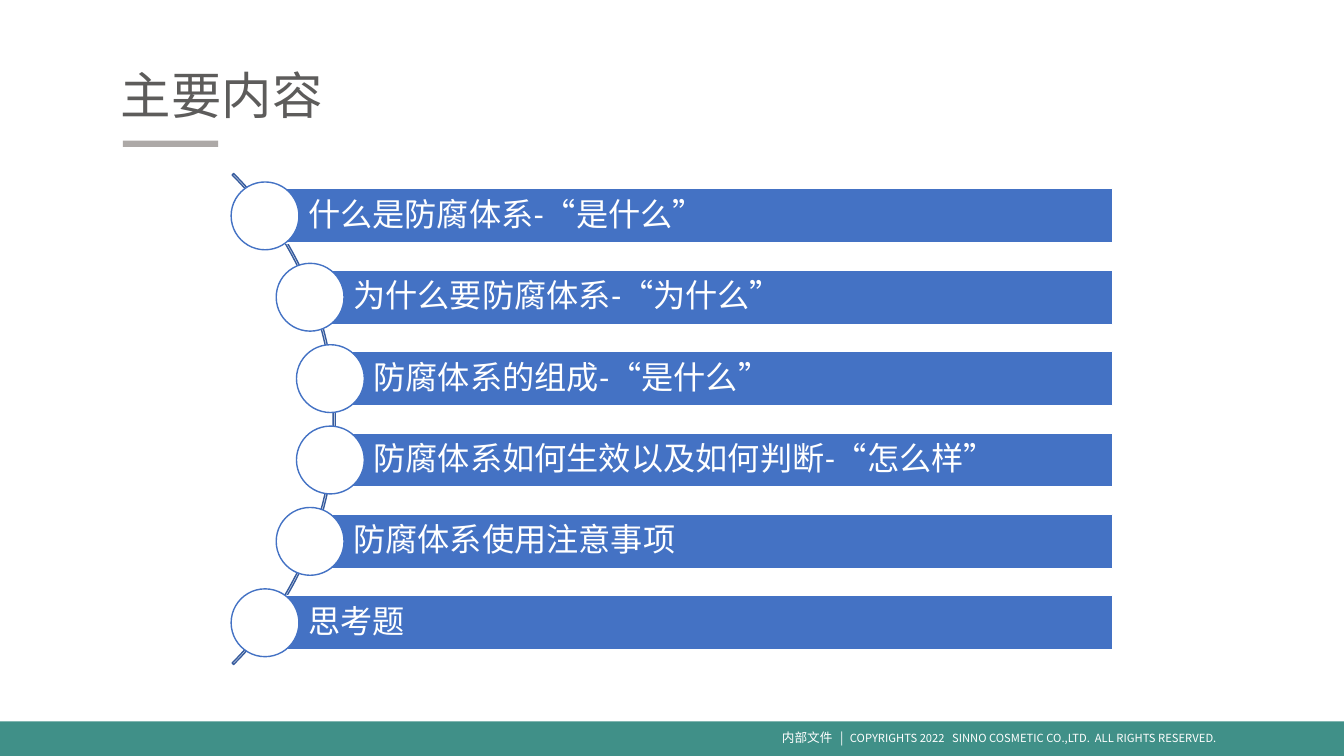
from pptx import Presentation
from pptx.dml.color import RGBColor
from pptx.enum.shapes import MSO_SHAPE as SHAPE
from pptx.enum.text import MSO_ANCHOR as ANCHOR, MSO_AUTO_SIZE as FIT, PP_ALIGN as ALIGN
from pptx.oxml.ns import qn
from pptx.util import Pt
from lxml.etree import SubElement

CJK_FONT = "Noto Sans CJK SC"
BLUE, WHITE = "4472C4", "FFFFFF"
TOPICS = [
    (189.3, "什么是防腐体系-“是什么”"),
    (221.5, "为什么要防腐体系-“为什么”"),
    (236, "防腐体系的组成-“是什么”"),
    (236, "防腐体系如何生效以及如何判断-“怎么样”"),
    (221.5, "防腐体系使用注意事项"),
    (189.3, "思考题"),
]
FOOTER = [
    ("内部文件\t|", 9),
    ("\tCOPYRIGHTS 2022\tSINNO COSMETIC CO.,LTD.\tALL RIGHTS RESERVED.", 8),
]
FOOTER_TABS = [41.5, 48.5, 121.5, 223.5]
BAR_TOP, BAR_STEP, BAR_HEIGHT, BAR_RIGHT = 134.8, 58.13, 38.75, 794.7
CIRCLE = BAR_HEIGHT * 1.25


def paint(color_format, color):
    color_format.rgb = RGBColor.from_string(color)


def apply(target, values):
    for name, value in values.items():
        setattr(target, name, value)


def add_block(slide, kind, bounds, fill=None, line=None):
    block = slide.shapes.add_shape(kind, *map(Pt, bounds))
    block.shadow.inherit = False
    if fill:
        block.fill.solid()
        paint(block.fill.fore_color, fill)
    else:
        block.fill.background()
    if line:
        paint(block.line.color, line)
        block.line.width = Pt(1)
    else:
        block.line.fill.background()
    return block


def add_span(para, text, size, color, font=CJK_FONT):
    span = para.add_run()
    span.text = text
    apply(span.font, {"size": Pt(size), "name": font})
    paint(span.font.color, color)
    SubElement(span.font._element, qn("a:ea"), typeface=CJK_FONT)


def add_title(slide, text):
    title = slide.shapes.title
    apply(title, {"left": Pt(79.2), "top": Pt(46.8), "width": Pt(621.4), "height": Pt(49.7)})
    apply(title.text_frame, {"vertical_anchor": ANCHOR.TOP, "word_wrap": True,
                             "auto_size": FIT.NONE})
    para = title.text_frame.paragraphs[0]
    apply(para, {"alignment": ALIGN.LEFT, "line_spacing": 0.9, "space_before": Pt(0)})
    add_span(para, text, 36, "5D5C5B")
    underline = add_block(slide, SHAPE.RECTANGLE, (87.8, 100.5, 68, 4.5), "867F7C")
    color = underline.fill._xPr.find(qn("a:solidFill"))[0]
    SubElement(color, qn("a:alpha"), val="67000")


def add_footer(slide):
    add_block(slide, SHAPE.RECTANGLE, (0, 515.2, 960, 24.8), "409088")
    box = slide.shapes.add_textbox(Pt(551.5), Pt(517.7), Pt(388.8), Pt(19.4))
    box.text_frame.word_wrap = True
    para = box.text_frame.paragraphs[0]
    para.alignment = ALIGN.JUSTIFY
    tabs = SubElement(para._p.get_or_add_pPr(), qn("a:tabLst"))
    for position in FOOTER_TABS:
        SubElement(tabs, qn("a:tab"), pos=str(Pt(position)), algn="l")
    for text, size in FOOTER:
        add_span(para, text, size, WHITE)


def add_topic(slide, left, top, text):
    bar = add_block(slide, SHAPE.RECTANGLE, (left, top, BAR_RIGHT - left, BAR_HEIGHT), BLUE, WHITE)
    apply(bar.text_frame, {"vertical_anchor": ANCHOR.MIDDLE, "word_wrap": True,
                           "margin_left": Pt(30.8), "margin_right": Pt(4.6),
                           "margin_top": Pt(4.6), "margin_bottom": Pt(4.6)})
    para = bar.text_frame.paragraphs[0]
    apply(para, {"alignment": ALIGN.LEFT, "line_spacing": 0.9})
    add_span(para, text, 23, WHITE, "Calibri")
    circle_top = top + (BAR_HEIGHT - CIRCLE) / 2
    add_block(slide, SHAPE.OVAL, (left - CIRCLE / 2, circle_top, CIRCLE, CIRCLE), WHITE, BLUE)


def main():
    deck = Presentation()
    apply(deck, {"slide_width": Pt(960), "slide_height": Pt(540)})
    slide = deck.slides.add_slide(deck.slide_layouts[5])
    add_title(slide, "主要内容")
    add_footer(slide)
    arc = add_block(slide, SHAPE.BLOCK_ARC, (-256.5, 51.3, 496, 496), line="365B9D")
    for index, value in enumerate((189, 27, 0.003)):
        arc.adjustments[index] = value
    for row, (left, text) in enumerate(TOPICS):
        add_topic(slide, left, BAR_TOP + row * BAR_STEP, text)
    deck.save("out.pptx")


if __name__ == "__main__":
    main()
